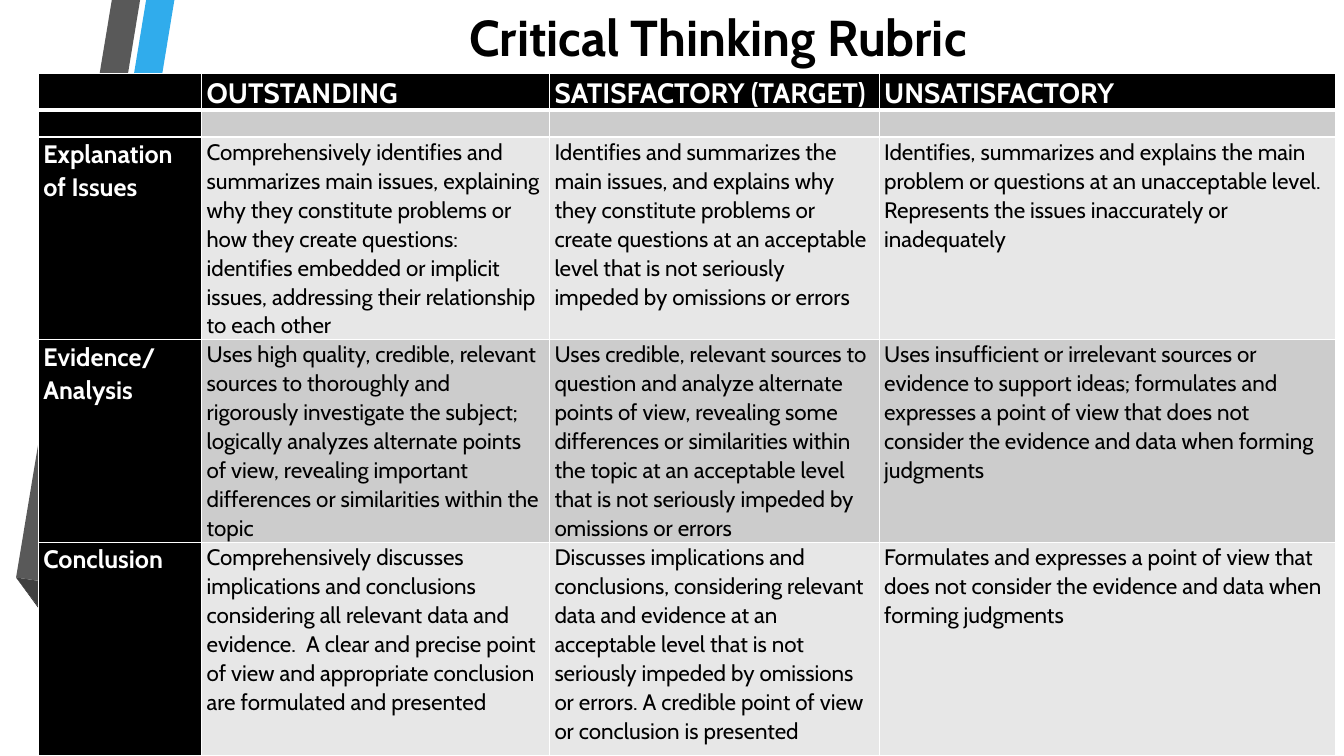
import pptx
import pptx.dml.color
import pptx.enum.text
import pptx.oxml
import pptx.oxml.ns
import pptx.util

Inches = pptx.util.Inches
Pt = pptx.util.Pt
BLACK, WHITE, DARK_BAND, LIGHT_BAND = "000000", "FFFFFF", "CCCCCC", "E7E7E7"

# Slanted ribbons: fill and corner points in inches
RIBBONS = [
    ("30ACEC", [(0.5, 5.78), (0.77, 5.83), (1.73, 0), (1.45, 0)]),
    ("595959", [(1.39, 0), (1.11, 0), (0.16, 5.73), (0.44, 5.77)]),
    ("262626", [(0.16, 5.73), (1.45, 7.5), (1.51, 7.5)]),
    ("0C5A82", [(0.5, 5.79), (2.08, 7.5), (2.14, 7.5)]),
    ("1287C3", [(0.5, 5.79), (2.14, 7.5), (2.83, 7.5), (0.77, 5.83), (0.5, 5.78)]),
    ("404040", [(2.02, 7.5), (0.48, 5.83), (0.43, 5.77), (0.16, 5.73), (1.51, 7.5)]),
]

COLUMN_WIDTHS = [1.62, 3.45, 3.27, 4.53]
ROW_HEIGHTS = [0.36, 0.27, 2.01, 2.01, 2.12]
RUBRIC = [
    ["", "OUTSTANDING", "SATISFACTORY (TARGET)", "UNSATISFACTORY"],
    ["", "", "", ""],
    ["Explanation of Issues",
     "Comprehensively identifies and summarizes main issues, explaining why they "
     "constitute problems or how they create questions: identifies embedded or "
     "implicit issues, addressing their relationship to each other",
     "Identifies and summarizes the main issues, and explains why they constitute "
     "problems or create questions at an acceptable level that is not seriously "
     "impeded by omissions or errors",
     "Identifies, summarizes and explains the main problem or questions at an "
     "unacceptable level. Represents the issues inaccurately or inadequately"],
    ["Evidence/\nAnalysis",
     "Uses high quality, credible, relevant sources to thoroughly and rigorously "
     "investigate the subject; logically analyzes alternate points of view, "
     "revealing important differences or similarities within the topic",
     "Uses credible, relevant sources to question and analyze alternate points of "
     "view, revealing some differences or similarities within the topic at an "
     "acceptable level that is not seriously impeded by omissions or errors",
     "Uses insufficient or irrelevant sources or evidence to support ideas; "
     "formulates and expresses a point of view that does not consider the evidence "
     "and data when forming judgments"],
    ["Conclusion",
     "Comprehensively discusses implications and conclusions considering all "
     "relevant data and evidence.  A clear and precise point of view and "
     "appropriate conclusion are formulated and presented",
     "Discusses implications and conclusions, considering relevant data and "
     "evidence at an acceptable level that is not seriously impeded by omissions "
     "or errors. A credible point of view or conclusion is presented",
     "Formulates and expresses a point of view that does not consider the evidence "
     "and data when forming judgments"],
]


def color(value):
    return pptx.dml.color.RGBColor.from_string(value)


class RubricPage:
    """Holds the font and the current slide."""

    def __init__(self, deck, font):
        self.font = font
        self.page = deck.slides.add_slide(deck.slide_layouts[6])

    def ribbon(self, fill, points):
        corners = [(Inches(x), Inches(y)) for x, y in points]
        builder = self.page.shapes.build_freeform(*corners[0])
        builder.add_line_segments(corners[1:], close=True)
        shape = builder.convert_to_shape()
        shape.shadow.inherit = False
        shape.fill.solid()
        shape.fill.fore_color.rgb = color(fill)
        shape.line.fill.background()

    def add_span(self, para, text, size, ink, bold):
        span = para.add_run()
        span.text = text
        span.font.name = self.font
        span.font.size = Pt(size)
        span.font.bold = bold
        span.font.color.rgb = color(ink)

    def title(self, text, left, top, width, height):
        box = self.page.shapes.add_textbox(
            Inches(left), Inches(top), Inches(width), Inches(height))
        frame = box.text_frame
        frame.word_wrap = True
        frame.vertical_anchor = pptx.enum.text.MSO_ANCHOR.MIDDLE
        para = frame.paragraphs[0]
        para.alignment = pptx.enum.text.PP_ALIGN.CENTER
        self.add_span(para, text, 36, BLACK, True)

    def borders(self, cell, widths):
        properties = cell._tc.get_or_add_tcPr()
        for index, (side, width) in enumerate(widths.items()):
            properties.insert(index, pptx.oxml.parse_xml(
                f'<a:ln{side} {pptx.oxml.ns.nsdecls("a")} w="{Pt(width)}"><a:solidFill>'
                f'<a:srgbClr val="{WHITE}"/></a:solidFill></a:ln{side}>'))

    def cell(self, cell, text, fill, size, ink, bold):
        cell.margin_left = cell.margin_right = Inches(0.05)
        cell.margin_top = cell.margin_bottom = 0
        cell.fill.solid()
        cell.fill.fore_color.rgb = color(fill)
        frame = cell.text_frame
        for index, line in enumerate(text.split("\n")):
            para = frame.add_paragraph() if index else frame.paragraphs[0]
            para.line_spacing = 1.07
            if line:
                self.add_span(para, line, size, ink, bold)
            else:
                # Small end mark keeps an empty row low
                para._p.append(pptx.oxml.parse_xml(
                    f'<a:endParaRPr {pptx.oxml.ns.nsdecls("a")} sz="1000"/>'))

    def table(self, rows, left, top, widths, heights):
        table = self.page.shapes.add_table(
            len(rows), len(widths), Inches(left), Inches(top),
            Inches(sum(widths)), Inches(sum(heights))).table
        for column, width in zip(table.columns, widths):
            column.width = Inches(width)
        for row, height in zip(table.rows, heights):
            row.height = Inches(height)
        for r, texts in enumerate(rows):
            for c, text in enumerate(texts):
                cell = table.cell(r, c)
                heading = r == 0 or c == 0
                band = DARK_BAND if r % 2 else LIGHT_BAND
                size = 20 if r == 0 else 18 if c == 0 else 16
                self.cell(cell, text, BLACK if heading else band, size,
                          WHITE if heading else BLACK, heading)
                self.borders(cell, {"L": 1, "R": 1, "T": 3 if r == 1 else 1,
                                    "B": 3 if r == 0 else 1})


def main():
    deck = pptx.Presentation()
    deck.slide_width, deck.slide_height = Inches(13.33), Inches(7.5)
    rubric = RubricPage(deck, "Cabin")

    # Background ribbons
    for fill, points in RIBBONS:
        rubric.ribbon(fill, points)

    # Title and rubric table
    rubric.title("Critical Thinking Rubric", 1.64, 0, 10.96, 0.73)
    rubric.table(RUBRIC, 0.38, 0.73, COLUMN_WIDTHS, ROW_HEIGHTS)

    deck.save("out.pptx")


if __name__ == "__main__":
    main()
